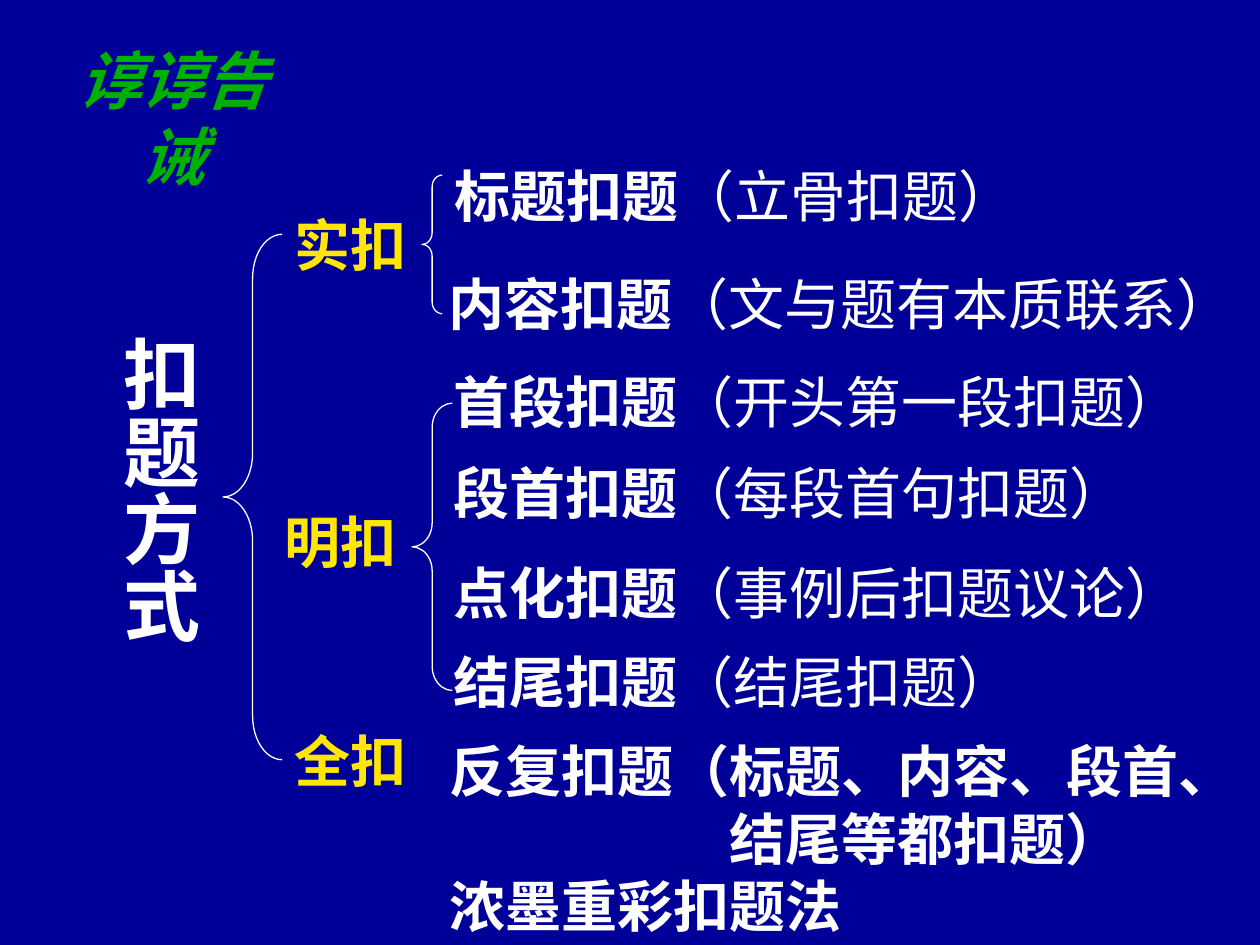
from pptx import Presentation
from pptx.dml.color import RGBColor
from pptx.enum.shapes import MSO_SHAPE as Shape
from pptx.enum.text import MSO_AUTO_SIZE as AutoSize, PP_ALIGN as Align
from pptx.oxml.ns import qn
from pptx.util import Inches, Pt
from lxml.etree import SubElement

WIDTH, HEIGHT = 10, 7.5
NAVY, WHITE, YELLOW, GREEN = "000099", "FFFFFF", "FFE701", "00B000"
SANS, JAPANESE, LATIN = "Noto Sans CJK SC", "Noto Sans CJK JP", "Arial"


def color(value):
    return RGBColor.from_string(value)


class Board:
    """Draws text and braces on one slide, with lengths on a grid of one-inch cells."""

    def __init__(self, page):
        self.page = page
        fill = page.background.fill
        fill.solid()
        fill.fore_color.rgb = color(NAVY)

    def text(self, area, paragraphs, size=32, ink=WHITE, name=SANS, wrap=False,
             italic=None, align=None, vertical=False):
        box = self.page.shapes.add_textbox(*map(Inches, area))
        frame = box.text_frame
        frame.word_wrap = wrap
        frame.auto_size = AutoSize.SHAPE_TO_FIT_TEXT
        if vertical:
            frame._txBody.bodyPr.set("vert", "eaVert")
        for index, spans in enumerate(paragraphs):
            para = frame.add_paragraph() if index else frame.paragraphs[0]
            para.alignment = align
            font = para.font
            font.size, font.name, font.italic = Pt(size), name, italic
            font.bold = True
            font.color.rgb = color(ink)
            SubElement(font._element, qn("a:ea"), typeface=SANS)
            for words, changes in spans:
                span = para.add_run()
                span.text = words
                for key, value in changes.items():
                    setattr(span.font, key, value)
        return frame

    def entry(self, area, term, note, **style):
        self.text(area, [[(term, {}), (f"（{note}）", {"bold": False})]], **style)

    def brace(self, area, curve):
        shape = self.page.shapes.add_shape(Shape.LEFT_BRACE, *map(Inches, area))
        shape.shadow.inherit = False
        shape.adjustments[0] = curve
        shape.fill.background()
        shape.line.color.rgb = color(WHITE)
        shape.line.width = Pt(0.75)


deck = Presentation()
deck.slide_width, deck.slide_height = Inches(WIDTH), Inches(HEIGHT)
board = Board(deck.slides.add_slide(deck.slide_layouts[6]))

board.text((0.35, 0.28, 2.05, 0.91), [[("谆谆告诫", {})]], size=36, ink=GREEN,
           italic=True, align=Align.CENTER)
board.text((0.75, 2.57, 0.93, 2.51), [[("扣题方式", {})]], size=44, vertical=True)

for left, top, label in [(2.24, 1.62, "实扣"), (2.16, 3.98, "明扣"), (2.24, 5.72, "全扣")]:
    board.text((left, top, 1.09, 0.63), [[(label, {})]], ink=YELLOW)

for area, curve in [((1.77, 1.86, 0.47, 4.17), 0.74),
                    ((3.35, 1.39, 0.16, 1.1), 0.58),
                    ((3.27, 3.2, 0.32, 2.28), 0.6)]:
    board.brace(area, curve)

for left, top, width, term, note in [
    (3.51, 1.23, 5.83, "标题扣题", "立骨扣题"),
    (3.46, 2.09, 6.66, "内容扣题", "文与题有本质联系"),
    (3.5, 5.09, 5.2, "结尾扣题", "结尾扣题"),
]:
    board.entry((left, top, width, 0.63), term, note, name=LATIN, wrap=True)

for top, width, term, note in [
    (2.87, 5.99, "首段扣题", "开头第一段扣题"),
    (3.59, 5.54, "段首扣题", "每段首句扣题"),
    (4.38, 5.99, "点化扣题", "事例后扣题议论"),
]:
    board.entry((3.5, top, width, 0.63), term, note)

japanese = {"name": JAPANESE}
summary = board.text((3.47, 5.8, 6.65, 1.7), [
    [("反复扣题", {}), ("（标题、内容、段首、", japanese)],
    [("结尾等都扣题）", japanese)],
    [("浓墨重彩扣题法", {})],
], wrap=True)
properties = summary.paragraphs[1]._p.get_or_add_pPr()
properties.set("marL", str(Pt(5 * 32)))
properties.set("indent", "0")

deck.save("out.pptx")
